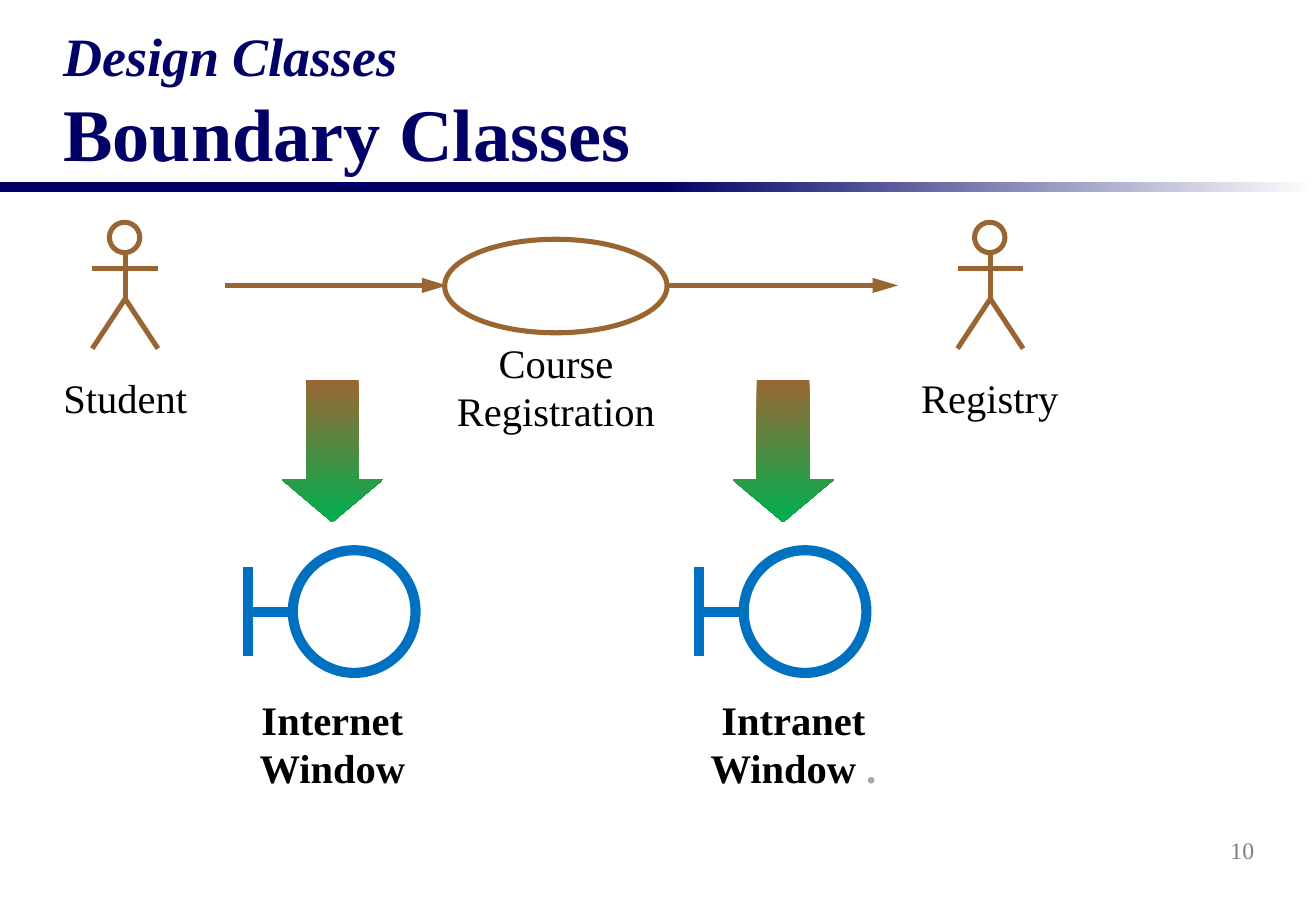
from lxml import etree
from pptx import Presentation
from pptx.dml.color import RGBColor
from pptx.enum.shapes import MSO_CONNECTOR, MSO_SHAPE
from pptx.enum.text import MSO_ANCHOR, MSO_AUTO_SIZE, PP_ALIGN
from pptx.oxml.ns import qn
from pptx.util import Pt

PX = 9144  # 100 px to the inch
FONT = "Times New Roman"
NAVY = RGBColor(0x00, 0x00, 0x66)
WHITE = RGBColor(0xFF, 0xFF, 0xFF)
BLACK = RGBColor(0x00, 0x00, 0x00)
GRAY = RGBColor(0x80, 0x80, 0x80)
LIGHT_GRAY = RGBColor(0xA6, 0xA6, 0xA6)
BROWN = RGBColor(0x99, 0x66, 0x33)
GREEN = RGBColor(0x00, 0xB0, 0x50)
BLUE = RGBColor(0x00, 0x70, 0xC0)
STRAIGHT = MSO_CONNECTOR.STRAIGHT
RECTANGLE, OVAL = MSO_SHAPE.RECTANGLE, MSO_SHAPE.OVAL
RIGHT_ARROW = MSO_SHAPE.RIGHT_ARROW
LEFT, CENTER, RIGHT = PP_ALIGN.LEFT, PP_ALIGN.CENTER, PP_ALIGN.RIGHT
MIDDLE, BOTTOM = MSO_ANCHOR.MIDDLE, MSO_ANCHOR.BOTTOM
NO_FIT, GROW = MSO_AUTO_SIZE.NONE, MSO_AUTO_SIZE.SHAPE_TO_FIT_TEXT

deck = Presentation()
deck.slide_width, deck.slide_height = 1083 * PX, 750 * PX
page = deck.slides.add_slide(deck.slide_layouts[5])
shapes = page.shapes


def draw_line(x1, y1, x2, y2, color, width, arrow=False):
    line = shapes.add_connector(STRAIGHT, x1 * PX, y1 * PX, x2 * PX, y2 * PX)
    line.line.color.rgb = color
    line.line.width = Pt(width)
    properties = line._element.spPr
    if arrow:
        etree.SubElement(properties.find(qn("a:ln")), qn("a:tailEnd"),
                         type="triangle", w="med", len="lg")
    etree.SubElement(properties, qn("a:effectLst"))


def draw_label(text, left, top, width, height, wrap=True, bold=False):
    box = shapes.add_textbox(left * PX, top * PX, width * PX, height * PX)
    frame = box.text_frame
    frame.word_wrap = wrap
    frame.auto_size = GROW
    para = frame.paragraphs[0]
    para.text = text
    para.alignment = CENTER
    para.font.name, para.font.size, para.font.bold = FONT, Pt(24), bold
    para.font.color.rgb = BLACK
    return box


# Band under the title: solid half, then fading half
for left, fades in ((0, False), (541, True)):
    band = shapes.add_shape(RECTANGLE, left * PX, 150 * PX, 542 * PX, 8 * PX)
    band.shadow.inherit = False
    band.line.fill.background()
    if fades:
        band.fill.gradient()
        band.fill.gradient_angle = 0
        for stop, color in zip(band.fill.gradient_stops, (NAVY, WHITE)):
            stop.color.rgb = color
    else:
        band.fill.solid()
        band.fill.fore_color.rgb = NAVY

# Title
title = shapes.title
title.left, title.top, title.width, title.height = 42 * PX, 33 * PX, 1000 * PX, 117 * PX
title.text_frame.auto_size = NO_FIT
title.text_frame.vertical_anchor = BOTTOM
para = title.text_frame.paragraphs[0]
para.alignment = LEFT
para.font.name, para.font.bold = FONT, True
para.font.color.rgb = NAVY
span = para.add_run()
span.text = "Design Classes"
span.font.size, span.font.italic = Pt(32), True
para.add_line_break()
span = para.add_run()
span.text = "Boundary Classes"
span.font.size, span.font.italic = Pt(44), False

# Slide number
box = shapes.add_textbox(816 * PX, 675 * PX, 226 * PX, 50 * PX)
box.text_frame.word_wrap = False
box.text_frame.vertical_anchor = MIDDLE
para = box.text_frame.paragraphs[0]
para.text = "10"
para.alignment = RIGHT
para.font.name, para.font.size = FONT, Pt(14)
para.font.color.rgb = GRAY

# Flow through the use case
draw_line(185, 235, 368, 235, BROWN, 3, arrow=True)
draw_line(539, 235, 739, 235, BROWN, 3, arrow=True)
draw_label("Course Registration", 333, 273, 249, 90)
ovals = [(366, 197, 183, 77, BROWN, 3)]

# Actors
for name, middle, left, width in (("Student", 103, 42, 122), ("Registry", 815, 748, 133)):
    draw_line(middle - 27, 221, middle + 27, 221, BROWN, 3)
    draw_line(middle, 208, middle, 246, BROWN, 3)
    for foot in (middle - 27, middle + 27):
        draw_line(middle, 246, foot, 287, BROWN, 3)
    draw_label(name, left, 302, width, 50, wrap=False)
    ovals.append((middle - 13, 183, 25, 25, BROWN, 3))

# Boundary classes with the arrows that lead to them
for name, edge, left, width in (("Internet Window", 204, 201, 145),
                                ("Intranet Window ", 575, 573, 160)):
    arrow = shapes.add_shape(RIGHT_ARROW, (edge + 11) * PX, 330 * PX, 117 * PX, 83 * PX)
    arrow.rotation = 90
    arrow.adjustments[0], arrow.adjustments[1] = 0.52, 0.42
    arrow.shadow.inherit = False
    arrow.line.fill.background()
    arrow.fill.gradient()
    arrow.fill.gradient_angle = 270
    for stop, color in zip(arrow.fill.gradient_stops, (BROWN, GREEN)):
        stop.color.rgb = color
    arrow._element.spPr.find(qn("a:gradFill")).set("rotWithShape", "0")

    draw_line(edge + 117, 504, edge, 504, BLUE, 6)
    draw_line(edge, 467, edge, 540, BLUE, 6)
    ovals.append((edge + 37, 453, 101, 101, BLUE, 6))
    label = draw_label(name, left, 567, width, 91, bold=True)

# Gray full stop after the last label
span = label.text_frame.paragraphs[0].add_run()
span.text = "."
span.font.color.rgb = LIGHT_GRAY

# Use case, heads and boundary circles lie over the lines
for left, top, width, height, color, weight in ovals:
    oval = shapes.add_shape(OVAL, left * PX, top * PX, width * PX, height * PX)
    oval.shadow.inherit = False
    oval.fill.solid()
    oval.fill.fore_color.rgb = WHITE
    oval.line.color.rgb = color
    oval.line.width = Pt(weight)

deck.save("out.pptx")
